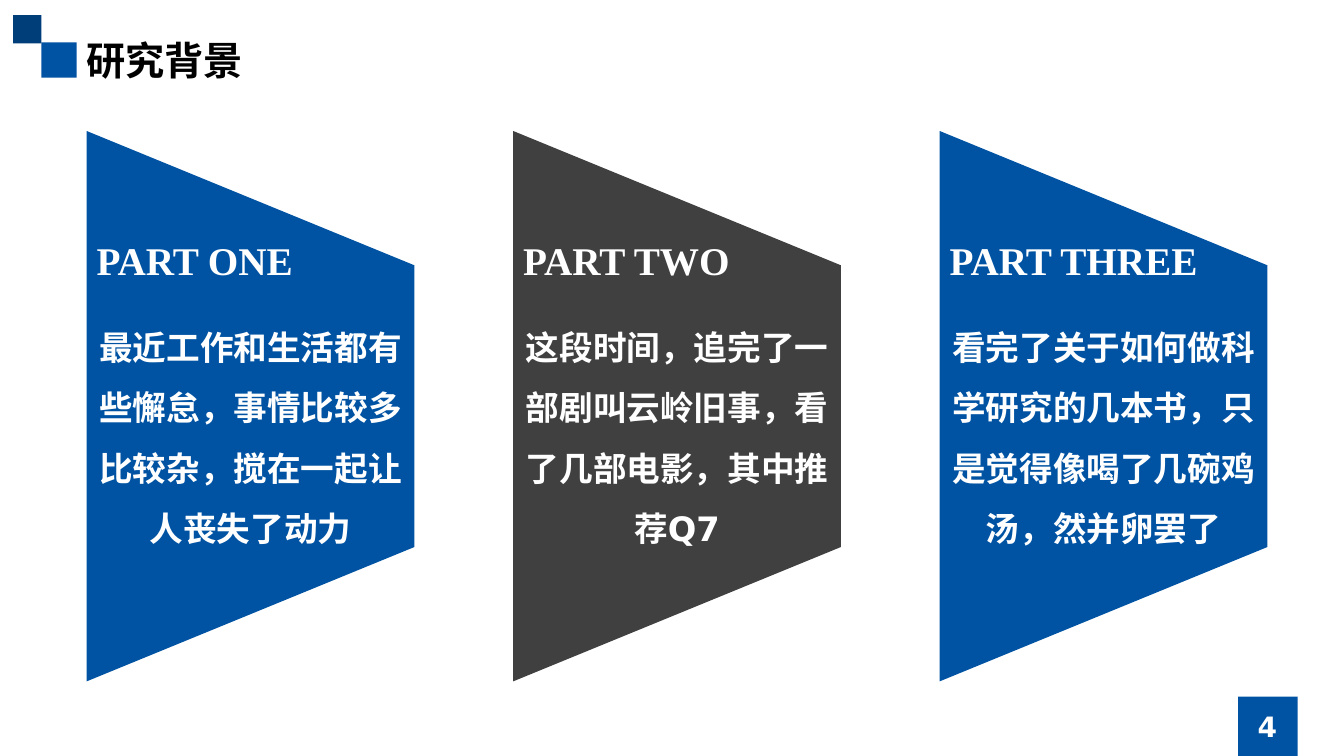
import pptx
import pptx.util
import pptx.dml.color
import pptx.enum.shapes
import pptx.enum.text
import pptx.oxml
import pptx.oxml.ns

Inches = pptx.util.Inches
Kind = pptx.enum.shapes.MSO_SHAPE
Align = pptx.enum.text.PP_ALIGN
Fit = pptx.enum.text.MSO_AUTO_SIZE
BLUE, NAVY, GREY, WHITE, BLACK = "0053A3", "003E7A", "404040", "FFFFFF", "000000"
HAN = "Noto Sans CJK SC"

deck = pptx.Presentation()
deck.slide_width, deck.slide_height = Inches(13.33), Inches(7.5)
slide = deck.slides.add_slide(deck.slide_layouts[6])


def block(kind, box, color):
    """Add a plain filled shape without outline or shadow."""
    shape = slide.shapes.add_shape(kind, *map(Inches, box))
    shape.shadow.inherit = False
    shape.fill.solid()
    shape.fill.fore_color.rgb = pptx.dml.color.RGBColor.from_string(color)
    shape.line.fill.background()
    return shape


def label(words, box, size, face, color=WHITE, wrap=True, fit=Fit.SHAPE_TO_FIT_TEXT, **form):
    """Add a bold one-paragraph text box; form holds paragraph settings."""
    frame = slide.shapes.add_textbox(*map(Inches, box)).text_frame
    frame.word_wrap, frame.auto_size = wrap, fit
    para = frame.paragraphs[0]
    for name, value in form.items():
        setattr(para, name, value)
    run = para.add_run()
    run.text = words
    for name, value in {"size": pptx.util.Pt(size), "name": face, "bold": True}.items():
        setattr(run.font, name, value)
    run.font.color.rgb = pptx.dml.color.RGBColor.from_string(color)
    east = pptx.oxml.parse_xml(
        f'<a:ea {pptx.oxml.ns.nsdecls("a")} typeface="{HAN}"/>')
    run.font._element.append(east)
    return frame


# Title and page number
block(Kind.RECTANGLE, (0.41, 0.42, 0.35, 0.35), BLUE)
block(Kind.RECTANGLE, (0.13, 0.15, 0.28, 0.28), NAVY)
block(Kind.RECTANGLE, (12.28, 6.91, 0.59, 0.59), BLUE)
label("研究背景", (0.76, 0.31, 5.91, 0.57), 28, HAN, BLACK)
page = label("4", (11.81, 7.01, 1.52, 0.4), 20, "DejaVu Sans",
             fit=Fit.NONE, alignment=Align.CENTER)
page.vertical_anchor = pptx.enum.text.MSO_ANCHOR.MIDDLE

# Three panels
parts = [
    ("PART ONE", 2.17, 0.72, BLUE,
     "最近工作和生活都有些懈怠，事情比较多比较杂，搅在一起让人丧失了动力"),
    ("PART TWO", 2.27, 0.81, GREY,
     "这段时间，追完了一部剧叫云岭旧事，看了几部电影，其中推荐Q7"),
    ("PART THREE", 2.68, 0.81, BLUE,
     "看完了关于如何做科学研究的几本书，只是觉得像喝了几碗鸡汤，然并卵罢了"),
]
width, height, top = 3.25, 5.46, 1.3
for i, (head, wide, high, color, body) in enumerate(parts):
    left = 0.86 + 4.23 * i
    # The trapezoid is turned a quarter, so its sides swap about the centre
    shift = (height - width) / 2
    panel = block(Kind.TRAPEZOID, (left - shift, top + shift, height, width), color)
    panel.adjustments[0] = 0.41
    panel.rotation = 90
    label(body, (left, 2.99, width, 2.52), 24, "DejaVu Sans",
          alignment=Align.CENTER, line_spacing=1.5)
    label(head, (left, 2.06, wide, high), 28, "Times New Roman",
          wrap=False, line_spacing=1.5)

deck.save("out.pptx")
